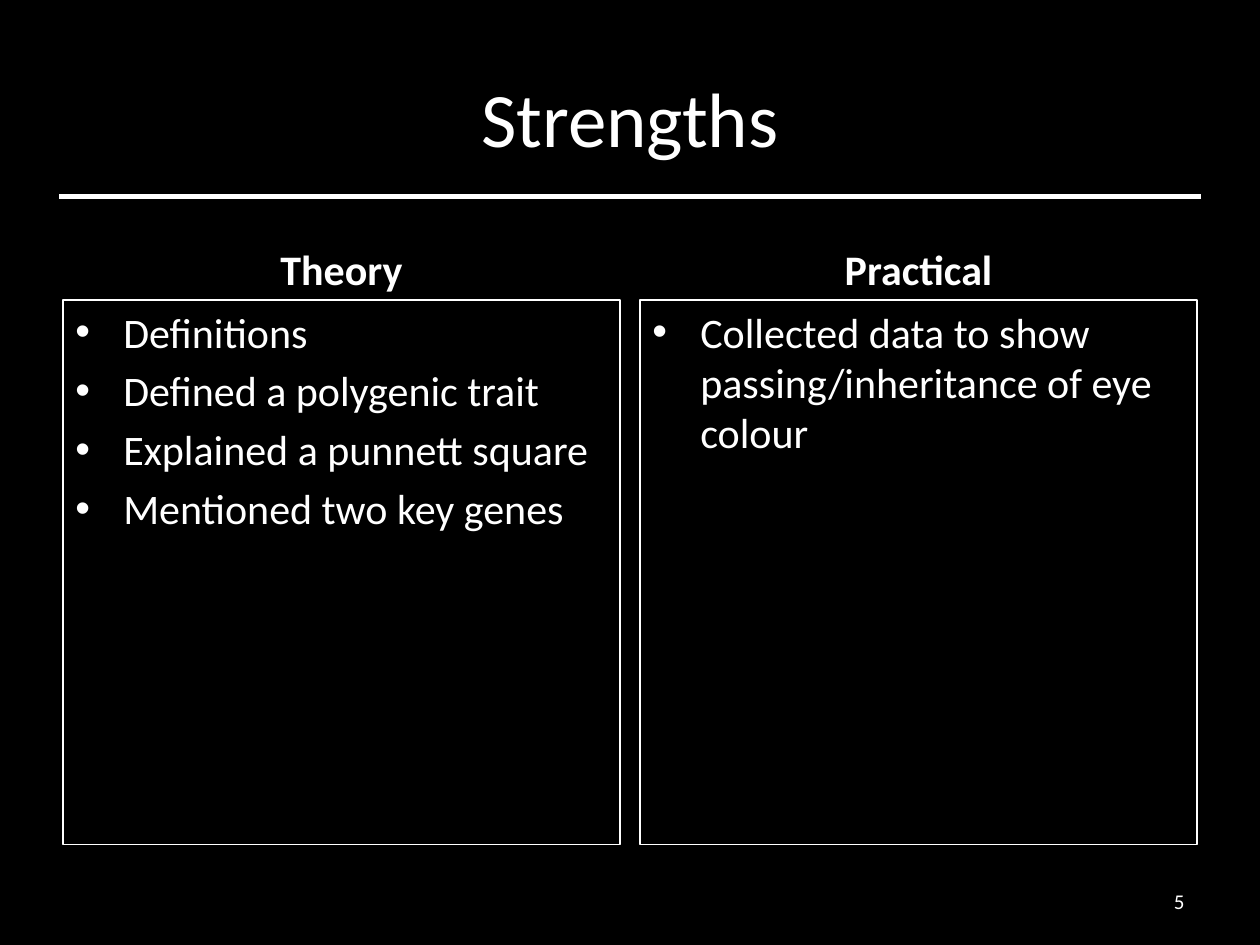
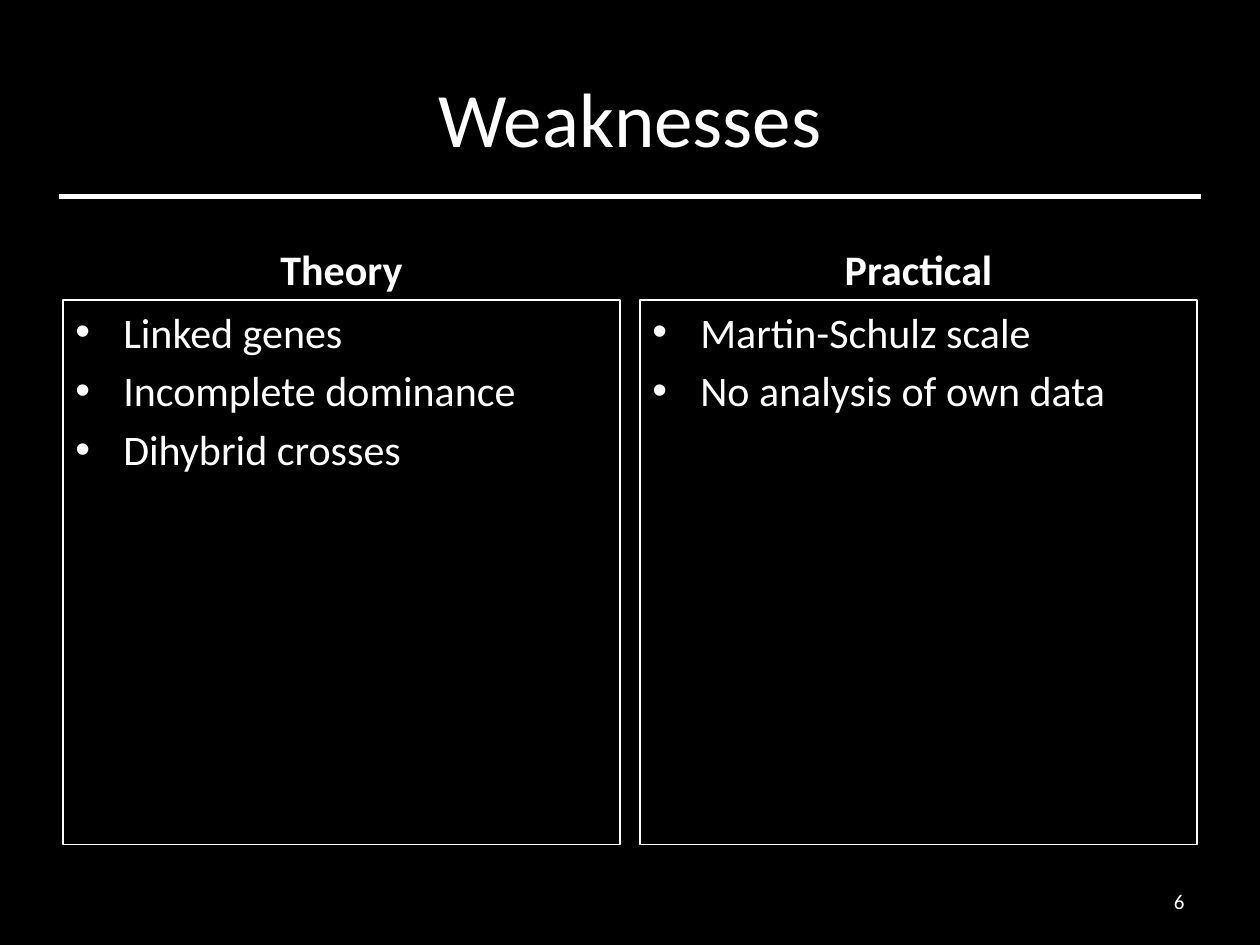
from lxml import etree
from pptx import Presentation
from pptx import util as u
from pptx.dml.color import RGBColor
from pptx.enum import shapes, text
from pptx.oxml import ns

BLACK = RGBColor(0x00, 0x00, 0x00)
WHITE = RGBColor(0xFF, 0xFF, 0xFF)
FONT = "Calibri"
TITLE_ONLY = 5

PAGE_WIDTH, PAGE_HEIGHT = 10, 7.5
MARGIN = 0.5
GUTTER = 0.16
CONTENT_WIDTH = PAGE_WIDTH - 2 * MARGIN
COLUMN_WIDTH = (CONTENT_WIDTH - GUTTER) / 2
RULE_TOP, RULE_OVERHANG = 1.56, 0.03
HEADING_TOP, LIST_TOP, LIST_BOTTOM = 1.68, 2.38, 6.7
BULLET_INDENT = 0.38
BODY_SIZE = 24
BODY_SPACING = 0.2 * BODY_SIZE

FIRST_NUMBER = 5
PAGES = [
    ("Strengths", [
        ("Theory", ["Definitions", "Defined a polygenic trait",
                    "Explained a punnett square", "Mentioned two key genes"]),
        ("Practical", ["Collected data to show passing/inheritance of eye colour"]),
    ]),
    ("Weaknesses", [
        ("Theory", ["Linked genes", "Incomplete dominance", "Dihybrid crosses"]),
        ("Practical", ["Martin-Schulz scale", "No analysis of own data"]),
    ]),
]


def inches(*lengths):
    return [u.Inches(length) for length in lengths]


def add_bullet(para):
    """Give the paragraph a round bullet with a hanging indent."""
    properties = para._p.get_or_add_pPr()
    indent = u.Inches(BULLET_INDENT)
    properties.set("marL", str(indent))
    properties.set("indent", str(-indent))
    font = etree.SubElement(properties, ns.qn("a:buFont"))
    font.set("typeface", "Arial")
    bullet = etree.SubElement(properties, ns.qn("a:buChar"))
    bullet.set("char", "•")


def write(shape, *lines, size=BODY_SIZE, bold=False, align=text.PP_ALIGN.LEFT,
          anchor=text.MSO_ANCHOR.TOP, before=0, bullets=False):
    """Fill the shape with one paragraph for each line."""
    frame = shape.text_frame
    frame.word_wrap = True
    frame.vertical_anchor = anchor
    for index, line in enumerate(lines):
        para = frame.add_paragraph() if index else frame.paragraphs[0]
        para.alignment = align
        para.space_before = u.Pt(before)
        if bullets:
            add_bullet(para)
        span = para.add_run()
        span.text = line
        span.font.name = FONT
        span.font.size = u.Pt(size)
        span.font.bold = bold
        span.font.color.rgb = WHITE


def add_title(page, title):
    box = page.shapes.title
    box.left, box.top, box.width, box.height = inches(MARGIN, 0.3, CONTENT_WIDTH, 1.25)
    write(box, title, size=44, align=text.PP_ALIGN.CENTER, anchor=text.MSO_ANCHOR.MIDDLE)


def add_title_rule(page):
    left = MARGIN - RULE_OVERHANG
    rule = page.shapes.add_connector(
        shapes.MSO_CONNECTOR.STRAIGHT,
        *inches(left, RULE_TOP, PAGE_WIDTH - left, RULE_TOP))
    rule.line.color.rgb = WHITE
    rule.line.width = u.Pt(3)
    etree.SubElement(rule._element.spPr, ns.qn("a:effectLst"))


def add_column(page, column, heading, points):
    """Add a heading with a framed bullet list below it."""
    left = MARGIN + column * (COLUMN_WIDTH + GUTTER)
    box = page.shapes.add_textbox(
        *inches(left, HEADING_TOP, COLUMN_WIDTH, LIST_TOP - HEADING_TOP))
    write(box, heading, bold=True, align=text.PP_ALIGN.CENTER,
          anchor=text.MSO_ANCHOR.BOTTOM, before=BODY_SPACING)

    frame = page.shapes.add_shape(
        shapes.MSO_SHAPE.RECTANGLE,
        *inches(left, LIST_TOP, COLUMN_WIDTH, LIST_BOTTOM - LIST_TOP))
    frame.shadow.inherit = False
    frame.fill.background()
    frame.line.color.rgb = WHITE
    frame.line.width = u.Pt(0.75)
    write(frame, *points, before=BODY_SPACING, bullets=True)


def add_page_number(page, number):
    width = 2.33
    box = page.shapes.add_textbox(
        *inches(PAGE_WIDTH - MARGIN - width, 6.95, width, 0.4))
    write(box, str(number), size=12, align=text.PP_ALIGN.RIGHT,
          anchor=text.MSO_ANCHOR.MIDDLE)


def main():
    deck = Presentation()
    deck.slide_width, deck.slide_height = inches(PAGE_WIDTH, PAGE_HEIGHT)
    backdrop = deck.slide_master.background.fill
    backdrop.solid()
    backdrop.fore_color.rgb = BLACK

    for number, (title, columns) in enumerate(PAGES, FIRST_NUMBER):
        page = deck.slides.add_slide(deck.slide_layouts[TITLE_ONLY])
        add_title_rule(page)
        add_title(page, title)
        for column, (heading, points) in enumerate(columns):
            add_column(page, column, heading, points)
        add_page_number(page, number)
    deck.save("out.pptx")


if __name__ == "__main__":
    main()
